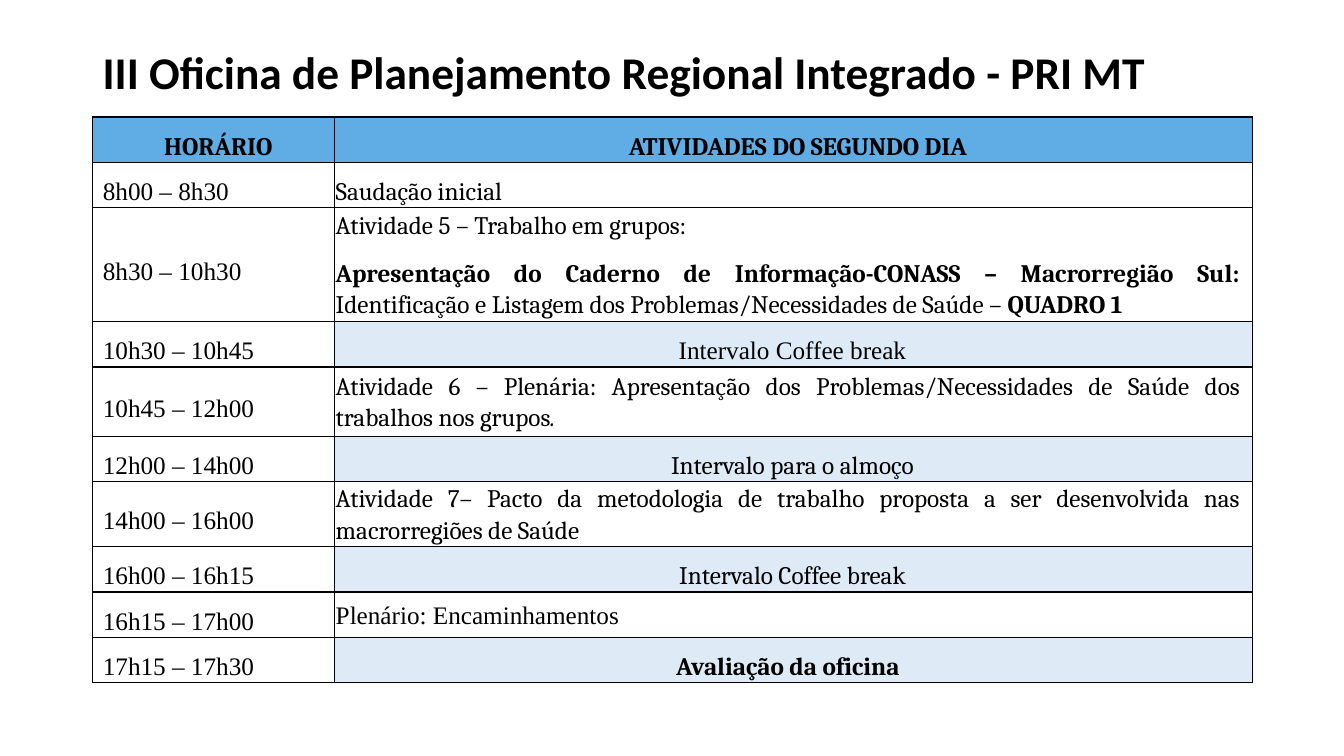
from dataclasses import dataclass

from lxml import etree
from pptx import Presentation
from pptx.dml.color import RGBColor
from pptx.enum.text import MSO_ANCHOR, PP_ALIGN
from pptx.oxml.ns import qn
from pptx.util import Inches, Pt

LEFT, CENTER, JUST = PP_ALIGN.LEFT, PP_ALIGN.CENTER, PP_ALIGN.JUSTIFY
MIDDLE = MSO_ANCHOR.MIDDLE


@dataclass(frozen=True)
class Theme:
    """Colours, fonts and sizes of the slide."""
    ink: str = "000000"
    head: str = "5FADE4"
    pause: str = "DEEAF6"
    plain: str = "FFFFFF"
    sans: str = "Calibri"
    serif: str = "Cambria"
    roman: str = "Times New Roman"
    title: float = 32.4
    body: float = 18
    rule: float = 1


@dataclass(frozen=True)
class Para:
    """One paragraph: its runs as (text, style) pairs and its layout."""
    runs: tuple
    align: int = JUST
    lines: float = 1.07
    before: float = 0
    left: float = 0
    right: float = 0.11
    font: str = Theme.serif


THEME = Theme()


def pause(text, font=THEME.serif):
    """Return the centred paragraph of a break."""
    return Para(((text, ""),), CENTER, 1.5, left=0.09, font=font)


def label(text):
    """Return a bold centred heading paragraph."""
    return Para(((text, "b"),), CENTER, 1.5, 12, 0.09, 0)


def hour(text):
    """Return the paragraph of a time slot."""
    return Para(((text, ""),), LEFT, 1.5, left=0.09, right=0, font=THEME.roman)


TITLE = "III Oficina de Planejamento Regional Integrado - PRI MT"
HEADS = ("HORÁRIO", "ATIVIDADES DO SEGUNDO DIA")
WIDTHS = (2.4, 9.1)
LOW = 0.29
AGENDA = (
    (LOW, "8h00 – 8h30", THEME.plain,
     [Para((("Saudação inicial", ""),), lines=1.5, before=12)]),
    (0.78, "8h30 – 10h30", THEME.plain, [
        Para((("Atividade 5 – Trabalho em grupos: ", ""),)),
        Para((("Apresentação do Caderno de Informação-CONASS – "
               "Macrorregião Sul:", "b"),
              (" Identificação e Listagem dos Problemas/Necessidades "
               "de Saúde – ", ""),
              ("QUADRO 1", "b")), before=12)]),
    (LOW, "10h30 – 10h45", THEME.pause,
     [pause("Intervalo Coffee break", THEME.roman)]),
    (0.69, "10h45 – 12h00", THEME.plain, [
        Para((("Atividade 6 – Plenária: Apresentação dos Problemas/"
               "Necessidades de Saúde dos trabalhos nos grupos", ""),
              (".", "i")), before=12)]),
    (LOW, "12h00 – 14h00", THEME.pause, [pause("Intervalo para o almoço")]),
    (LOW, "14h00 – 16h00", THEME.plain, [
        Para((("Atividade 7– Pacto da metodologia de trabalho proposta a ser "
               "desenvolvida nas macrorregiões de Saúde ", ""),), before=12)]),
    (LOW, "16h00 – 16h15", THEME.pause, [pause("Intervalo Coffee break")]),
    (LOW, "16h15 – 17h00", THEME.plain,
     [Para((("Plenário: Encaminhamentos", ""),), LEFT, font=THEME.roman)]),
    (LOW, "17h15 – 17h30", THEME.pause,
     [Para((("Avaliação da oficina", "b"),), CENTER, 1.5)]),
)


def write(frame, paras, size):
    """Fill a text frame with paragraphs, run by run."""
    for i, para in enumerate(paras):
        p = frame.add_paragraph() if i else frame.paragraphs[0]
        p.alignment = para.align
        p.line_spacing = para.lines
        p.space_before, p.space_after = Pt(para.before), Pt(0)
        props = p._p.get_or_add_pPr()
        props.set("marL", str(Inches(para.left)))
        props.set("marR", str(Inches(para.right)))
        props.set("indent", "0")
        for text, style in para.runs:
            run = p.add_run()
            run.text = text
            font = run.font
            font.name, font.size = para.font, Pt(size)
            font.bold, font.italic = style == "b", style == "i"
            font.color.rgb = RGBColor.from_string(THEME.ink)


def fill_cell(cell, paras, fill):
    """Set the borders, fill, margins and text of a cell."""
    props = cell._tc.get_or_add_tcPr()
    for side in ("lnL", "lnR", "lnT", "lnB"):
        line = etree.SubElement(props, qn(f"a:{side}"), w=str(Pt(THEME.rule)))
        solid = etree.SubElement(line, qn("a:solidFill"))
        etree.SubElement(solid, qn("a:srgbClr"), val=THEME.ink)
    cell.fill.solid()
    cell.fill.fore_color.rgb = RGBColor.from_string(fill)
    cell.margin_left = cell.margin_right = Inches(0.01)
    cell.margin_top = cell.margin_bottom = 0
    cell.vertical_anchor = MIDDLE
    write(cell.text_frame, paras, THEME.body)


def add_title(slide, x, y, w, h):
    """Place the title in its box."""
    frame = slide.shapes.add_textbox(
        Inches(x), Inches(y), Inches(w), Inches(h)).text_frame
    frame.word_wrap = True
    frame.vertical_anchor = MIDDLE
    para = Para(((TITLE, "b"),), LEFT, 0.9, right=0, font=THEME.sans)
    write(frame, [para], THEME.title)


def add_agenda(slide, x, y, w, h):
    """Place the timetable in its box."""
    table = slide.shapes.add_table(
        len(AGENDA) + 1, len(WIDTHS),
        Inches(x), Inches(y), Inches(w), Inches(h)).table
    table.horz_banding = False
    for col, width in zip(table.columns, WIDTHS):
        col.width = Inches(w * width / sum(WIDTHS))
    table.rows[0].height = Inches(LOW)
    for i, text in enumerate(HEADS):
        fill_cell(table.cell(0, i), [label(text)], THEME.head)
    for i, (tall, time, fill, paras) in enumerate(AGENDA, 1):
        table.rows[i].height = Inches(tall)
        fill_cell(table.cell(i, 0), [hour(time)], THEME.plain)
        fill_cell(table.cell(i, 1), paras, fill)


def main():
    """Build and save the slide."""
    deck = Presentation()
    deck.slide_width, deck.slide_height = Inches(13.33), Inches(7.5)
    slide = deck.slides.add_slide(deck.slide_layouts[6])
    add_title(slide, 0.92, 0.4, 11.5, 0.69)
    add_agenda(slide, 0.92, 1.16, 11.5, 5.61)
    deck.save("out.pptx")


if __name__ == "__main__":
    main()
